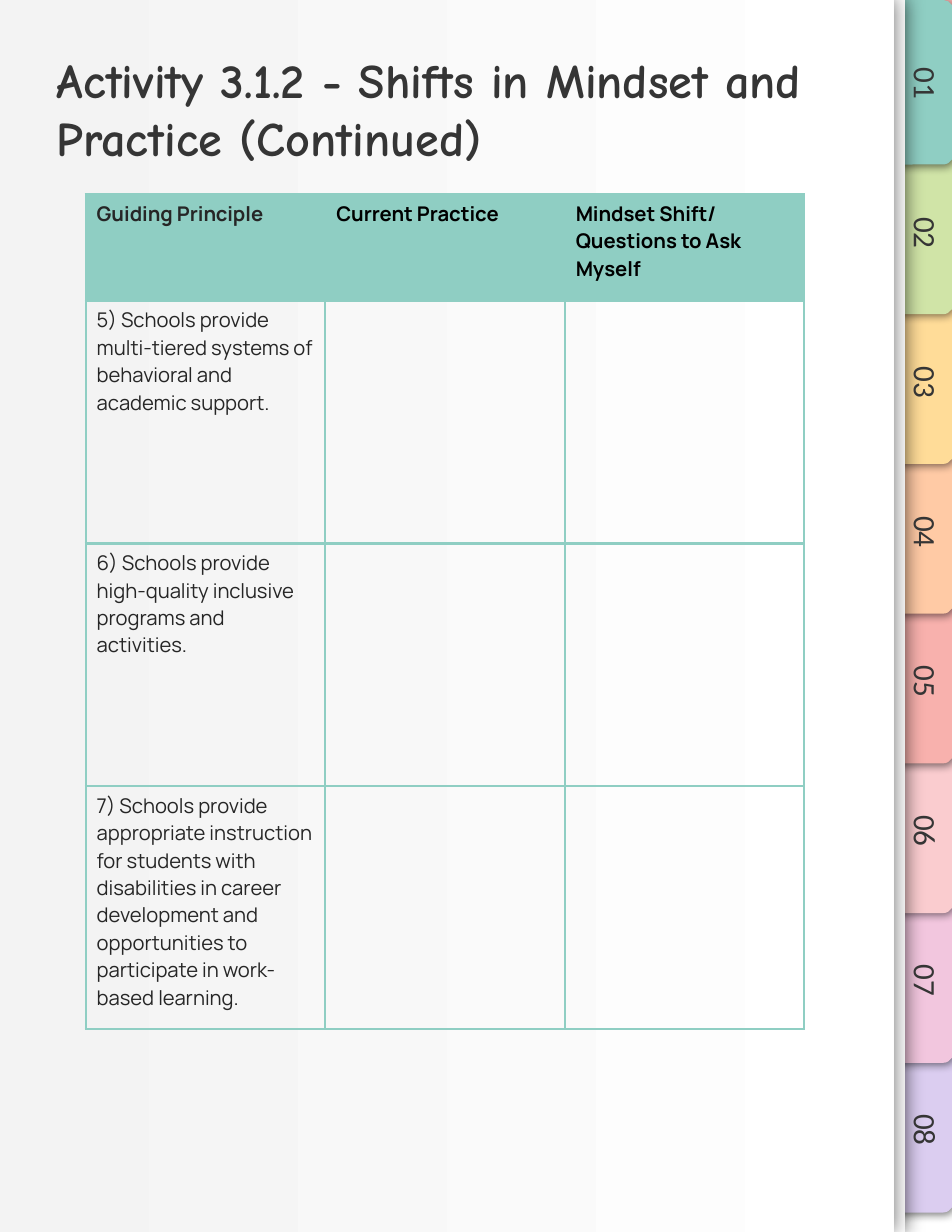
from dataclasses import dataclass

import pptx
import pptx.dml.color
import pptx.enum.shapes
import pptx.enum.text
import pptx.oxml
import pptx.oxml.ns
import pptx.util

Pt = pptx.util.Pt
ShapeKind = pptx.enum.shapes.MSO_SHAPE
Align = pptx.enum.text.PP_ALIGN
Anchor = pptx.enum.text.MSO_ANCHOR


@dataclass(frozen=True)
class Theme:
    backdrop: str = "F8B1AD"
    paper: str = "FFFFFF"
    paper_edge: str = "F3F3F3"
    heading: str = "353535"
    body: str = "262626"
    black: str = "000000"
    accent: str = "8FCEC3"
    tabs: tuple[str, ...] = ("8FCEC3", "D0E4A7", "FFDC98", "FFCAA5",
                             "F8B1AD", "FACCCF", "F2C6DE", "DBCDF0")
    title_font: str = "Comic Neue"
    table_font: str = "Manrope"
    tab_font: str = "Calibri"
    title_size: float = 31
    table_size: float = 13
    tab_size: float = 20


@dataclass(frozen=True)
class Box:
    left: float
    top: float
    width: float
    height: float

    def lengths(self) -> tuple:
        return Pt(self.left), Pt(self.top), Pt(self.width), Pt(self.height)

    def moved_down(self, distance: float) -> "Box":
        return Box(self.left, self.top + distance, self.width, self.height)


@dataclass(frozen=True)
class Shadow:
    blur: float
    distance: float
    angle: int


THEME = Theme()
PAGE_WIDTH, PAGE_HEIGHT = 612, 792
SHEET = Box(0, 0, 574.5, PAGE_HEIGHT)
UNDER_SHEET = Box(7.2, 0, 574.5, PAGE_HEIGHT)
TAB_BACKING = Box(581.7, 617.8, 30.3, 174.2)
FIRST_TAB, TAB_PITCH = Box(540.7, 33.8, 105.8, 38.2), 96.25
FIRST_LABEL, LABEL_PITCH = Box(547.2, 31, 103.7, 45.4), 96.1
TITLE = Box(29.5, 25.2, 512.6, 45.4)
TABLE = Box(55, 125, 462, 536.4)
ROW_HEIGHTS = (68.4, 156, 156, 156)
BORDER_WIDTH = 1.5
TAB_SHADOW = Shadow(5.6, 1.5, 61)
SHEET_SHADOW = Shadow(12.4, 0.8, 0)

TITLE_TEXT = "Activity 3.1.2 - Shifts in Mindset and Practice (Continued)"
HEADERS = ("Guiding Principle", "Current Practice",
           "Mindset Shift/ Questions to Ask Myself")
PRINCIPLES = (
    "5) Schools provide multi-tiered systems of behavioral and academic support.",
    "6) Schools provide high-quality inclusive programs and activities.",
    "7) Schools provide appropriate instruction for students with disabilities "
    "in career development and opportunities to participate in work-based learning.",
)


def rgb(color: str) -> pptx.dml.color.RGBColor:
    return pptx.dml.color.RGBColor.from_string(color)


def write(frame, text: str, *, font: str, size: float, color: str,
          bold: bool = False, align=Align.LEFT, anchor=Anchor.TOP,
          inset: float = 7.2) -> None:
    frame.word_wrap = True
    frame.vertical_anchor = anchor
    frame.margin_left = frame.margin_right = Pt(inset)
    frame.margin_top = frame.margin_bottom = Pt(inset)
    para = frame.paragraphs[0]
    para.alignment = align
    span = para.add_run()
    span.text = text
    span.font.name, span.font.size, span.font.bold = font, Pt(size), bold
    span.font.color.rgb = rgb(color)


def add_text(page, box: Box, text: str, rotation: float = 0, **style) -> None:
    shape = page.shapes.add_textbox(*box.lengths())
    shape.rotation = rotation
    write(shape.text_frame, text, **style)


def add_panel(page, kind, box: Box, color: str, rotation: float = 0,
              shadow: Shadow | None = None):
    shape = page.shapes.add_shape(kind, *box.lengths())
    shape.rotation = rotation
    shape.fill.solid()
    shape.fill.fore_color.rgb = rgb(color)
    shape.line.fill.background()
    shape.shadow.inherit = False
    if shadow:
        effects = shape._element.spPr.find(pptx.oxml.ns.qn("a:effectLst"))
        effects.append(pptx.oxml.parse_xml(
            f'<a:outerShdw {pptx.oxml.ns.nsdecls("a")} blurRad="{Pt(shadow.blur)}" '
            f'dist="{Pt(shadow.distance)}" dir="{shadow.angle * 60000}" '
            f'algn="bl" rotWithShape="0"><a:srgbClr val="{THEME.black}">'
            '<a:alpha val="50000"/></a:srgbClr></a:outerShdw>'))
    return shape


def add_tabs(page) -> None:
    """Stack the tabs from the bottom up, so each one overlaps the next."""
    for index, color in reversed(list(enumerate(THEME.tabs))):
        tab = add_panel(page, ShapeKind.ROUND_2_SAME_RECTANGLE,
                        FIRST_TAB.moved_down(index * TAB_PITCH), color,
                        rotation=90, shadow=TAB_SHADOW)
        tab.adjustments[0] = 0.167


def add_sheets(page) -> None:
    add_panel(page, ShapeKind.RECTANGLE, UNDER_SHEET, THEME.paper, shadow=SHEET_SHADOW)
    sheet = add_panel(page, ShapeKind.RECTANGLE, SHEET, THEME.paper, shadow=SHEET_SHADOW)
    sheet.fill.gradient()
    sheet.fill.gradient_angle = 0
    for stop, color in zip(sheet.fill.gradient_stops, (THEME.paper_edge, THEME.paper)):
        stop.color.rgb = rgb(color)


def add_tab_labels(page) -> None:
    for index in range(len(THEME.tabs)):
        add_text(page, FIRST_LABEL.moved_down(index * LABEL_PITCH), f"{index + 1:02}",
                 rotation=90, font=THEME.tab_font, size=THEME.tab_size,
                 color=THEME.heading, align=Align.CENTER, anchor=Anchor.BOTTOM)


def outline_cell(cell) -> None:
    properties = cell._tc.get_or_add_tcPr()
    for position, side in enumerate(("lnL", "lnR", "lnT", "lnB")):
        properties.insert(position, pptx.oxml.parse_xml(
            f'<a:{side} {pptx.oxml.ns.nsdecls("a")} w="{Pt(BORDER_WIDTH)}"><a:solidFill>'
            f'<a:srgbClr val="{THEME.accent}"/></a:solidFill></a:{side}>'))


def add_principles_table(page) -> None:
    rows = (HEADERS, *((principle, "", "") for principle in PRINCIPLES))
    table = page.shapes.add_table(len(rows), len(HEADERS), *TABLE.lengths()).table
    table.first_row = table.horz_banding = False
    for row, height in zip(table.rows, ROW_HEIGHTS):
        row.height = Pt(height)
    for row_index, texts in enumerate(rows):
        is_header = row_index == 0
        for column_index, text in enumerate(texts):
            cell = table.cell(row_index, column_index)
            if is_header:
                cell.fill.solid()
                cell.fill.fore_color.rgb = rgb(THEME.accent)
            else:
                cell.fill.background()
            outline_cell(cell)
            if text:
                write(cell.text_frame, text, font=THEME.table_font,
                      size=THEME.table_size, bold=is_header, inset=5,
                      color=THEME.black if column_index else THEME.body)


def main() -> None:
    deck = pptx.Presentation()
    deck.slide_width, deck.slide_height = Pt(PAGE_WIDTH), Pt(PAGE_HEIGHT)
    page = deck.slides.add_slide(deck.slide_layouts[6])
    page.background.fill.solid()
    page.background.fill.fore_color.rgb = rgb(THEME.backdrop)

    backing = add_panel(page, ShapeKind.RECTANGLE, TAB_BACKING, THEME.paper)
    backing.line.color.rgb = rgb(THEME.paper)
    backing.line.width = Pt(0.75)
    add_tabs(page)
    add_sheets(page)
    add_tab_labels(page)
    add_principles_table(page)
    add_text(page, TITLE, TITLE_TEXT, font=THEME.title_font,
             size=THEME.title_size, color=THEME.heading, bold=True)
    deck.save("out.pptx")


if __name__ == "__main__":
    main()
